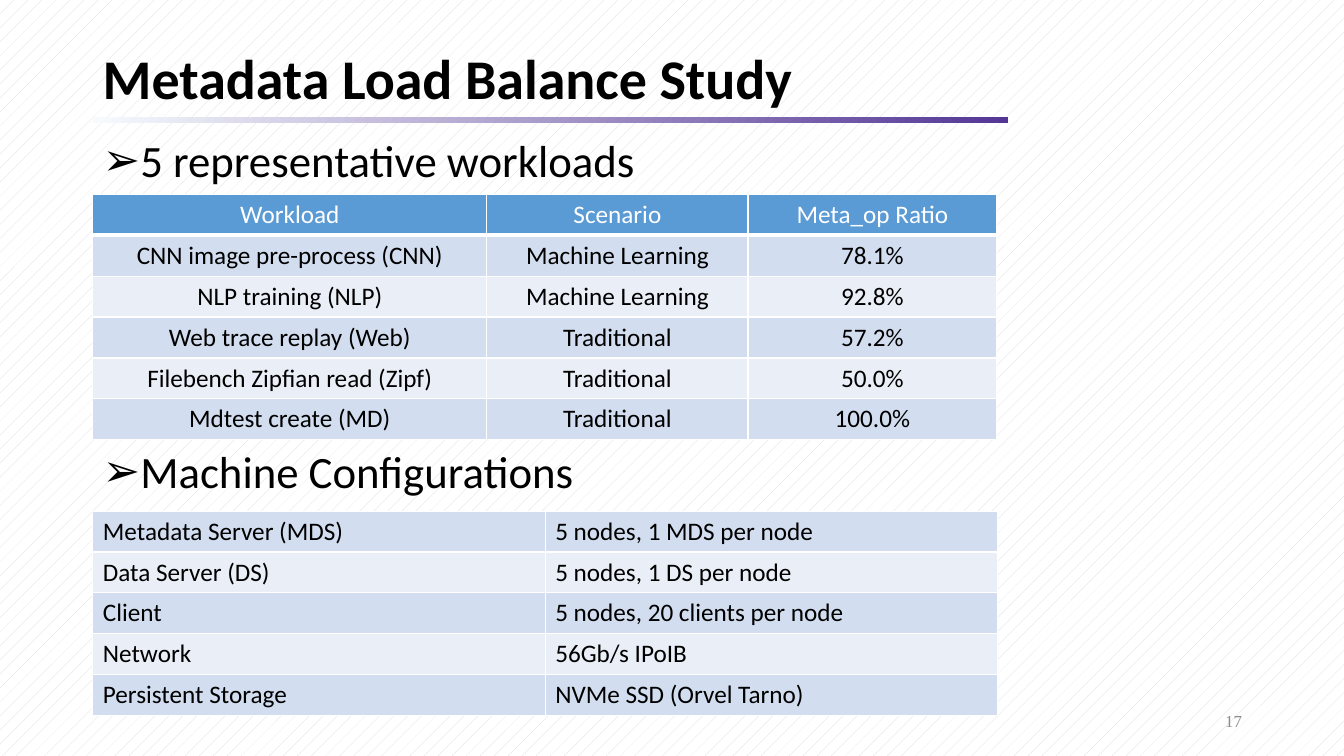
from dataclasses import dataclass

from pptx import Presentation
from pptx.dml.color import RGBColor
from pptx.enum.dml import MSO_PATTERN
from pptx.enum.shapes import MSO_SHAPE
from pptx.enum.text import MSO_ANCHOR, PP_ALIGN
from pptx.oxml.ns import qn
from pptx.util import Cm, Pt
from lxml import etree

RECTANGLE = MSO_SHAPE.RECTANGLE
DOTS = MSO_PATTERN.PERCENT_5
TOP, MIDDLE = MSO_ANCHOR.TOP, MSO_ANCHOR.MIDDLE
LEFT, CENTER, RIGHT = PP_ALIGN.LEFT, PP_ALIGN.CENTER, PP_ALIGN.RIGHT


@dataclass(frozen=True)
class Theme:
    font: str = "Calibri"
    number_font: str = "Times New Roman"
    black: str = "000000"
    white: str = "FFFFFF"
    grey: str = "8C8C8C"
    dots: str = "D9D9D9"
    rule_start: str = "F7FAFD"
    rule_end: str = "543795"
    header: str = "5B9BD5"
    bands: tuple = ("D2DEEF", "EAEFF7")
    title_size: int = 40
    heading_size: int = 32
    table_size: int = 18
    number_size: int = 12


THEME = Theme()
MARGIN = 2.34
TEXT_WIDTH = 29.21
ROW_HEIGHT = 1.03

WORKLOADS = [
    ("Workload", "Scenario", "Meta_op Ratio"),
    ("CNN image pre-process (CNN)", "Machine Learning", "78.1%"),
    ("NLP training (NLP)", "Machine Learning", "92.8%"),
    ("Web trace replay (Web)", "Traditional", "57.2%"),
    ("Filebench Zipfian read (Zipf)", "Traditional", "50.0%"),
    ("Mdtest create (MD)", "Traditional", "100.0%"),
]
MACHINES = [
    ("Metadata Server (MDS)", "5 nodes, 1 MDS per node"),
    ("Data Server (DS)", "5 nodes, 1 DS per node"),
    ("Client", "5 nodes, 20 clients per node"),
    ("Network", "56Gb/s IPoIB"),
    ("Persistent Storage", "NVMe SSD (Orvel Tarno)"),
]


def rgb(code):
    return RGBColor.from_string(code)


def write(para, text, size, color=THEME.black, bold=False, font=THEME.font):
    span = para.add_run()
    span.text = text
    span.font.name = font
    span.font.size = Pt(size)
    span.font.bold = bold
    span.font.color.rgb = rgb(color)


def add_text_box(page, left, top, width, height, anchor=MIDDLE):
    """Add a wrapping text box and return its first paragraph."""
    box = page.shapes.add_textbox(Cm(left), Cm(top), Cm(width), Cm(height))
    box.text_frame.word_wrap = True
    box.text_frame.vertical_anchor = anchor
    return box.text_frame.paragraphs[0]


def add_heading(page, top, text):
    para = add_text_box(page, MARGIN, top, TEXT_WIDTH, 1.5, TOP)
    properties = para._p.get_or_add_pPr()
    properties.set("marL", str(Cm(0.63)))
    properties.set("indent", str(-Cm(0.63)))
    etree.SubElement(properties, qn("a:buFont"), typeface=THEME.font)
    etree.SubElement(properties, qn("a:buChar"), char="➢")
    para.line_spacing = 0.9
    write(para, text, THEME.heading_size)


def add_rule(page):
    rule = page.shapes.add_shape(RECTANGLE, Cm(MARGIN), Cm(2.95), Cm(23.06), Cm(0.15))
    rule.shadow.inherit = False
    rule.line.fill.background()
    rule.fill.gradient()
    rule.fill.gradient_angle = 0
    for stop, color in zip(rule.fill.gradient_stops, (THEME.rule_start, THEME.rule_end)):
        stop.color.rgb = rgb(color)


def set_borders(cell, top_width, bottom_width):
    properties = cell._tc.get_or_add_tcPr()
    widths = {"lnL": 1, "lnR": 1, "lnT": top_width, "lnB": bottom_width}
    for side, width in widths.items():
        line = etree.SubElement(properties, qn(f"a:{side}"), w=str(Pt(width)))
        fill = etree.SubElement(line, qn("a:solidFill"))
        etree.SubElement(fill, qn("a:srgbClr"), val=THEME.white)


def add_grid(page, top, rows, widths, has_header, align, anchor):
    frame = page.shapes.add_table(
        len(rows), len(widths), Cm(MARGIN), Cm(top), Cm(sum(widths)), Cm(ROW_HEIGHT * len(rows))
    )
    table = frame.table
    table.first_row = has_header
    for column, width in zip(table.columns, widths):
        column.width = Cm(width)
    for r, texts in enumerate(rows):
        table.rows[r].height = Cm(ROW_HEIGHT)
        is_header = has_header and r == 0
        below_header = has_header and r == 1
        fill = THEME.header if is_header else THEME.bands[(r - has_header) % 2]
        color = THEME.white if is_header else THEME.black
        for c, text in enumerate(texts):
            cell = table.cell(r, c)
            set_borders(cell, 3 if below_header else 1, 3 if is_header else 1)
            cell.fill.solid()
            cell.fill.fore_color.rgb = rgb(fill)
            cell.vertical_anchor = anchor
            para = cell.text_frame.paragraphs[0]
            para.alignment = align
            write(para, text, THEME.table_size, color)


def main():
    deck = Presentation()
    deck.slide_width, deck.slide_height = Cm(33.87), Cm(19.05)
    page = deck.slides.add_slide(deck.slide_layouts[6])

    # Background
    backdrop = page.background.fill
    backdrop.patterned()
    backdrop.pattern = DOTS
    backdrop.fore_color.rgb = rgb(THEME.dots)
    backdrop.back_color.rgb = rgb(THEME.white)

    # Title, rule and page number
    add_rule(page)
    title = add_text_box(page, MARGIN, 1.09, TEXT_WIDTH, 1.9)
    title.line_spacing = 0.9
    write(title, "Metadata Load Balance Study", THEME.title_size, bold=True)
    number = add_text_box(page, 23.93, 17.65, 7.62, 1.02)
    number.alignment = RIGHT
    write(number, "17", THEME.number_size, THEME.grey, font=THEME.number_font)

    # Workloads
    add_heading(page, 3.38, "5 representative workloads")
    add_grid(page, 4.9, WORKLOADS, (9.93, 6.58, 6.27), True, CENTER, MIDDLE)

    # Machines
    add_heading(page, 11.2, "Machine Configurations")
    add_grid(page, 12.88, MACHINES, (11.4, 11.4), False, LEFT, TOP)

    deck.save("out.pptx")


if __name__ == "__main__":
    main()
